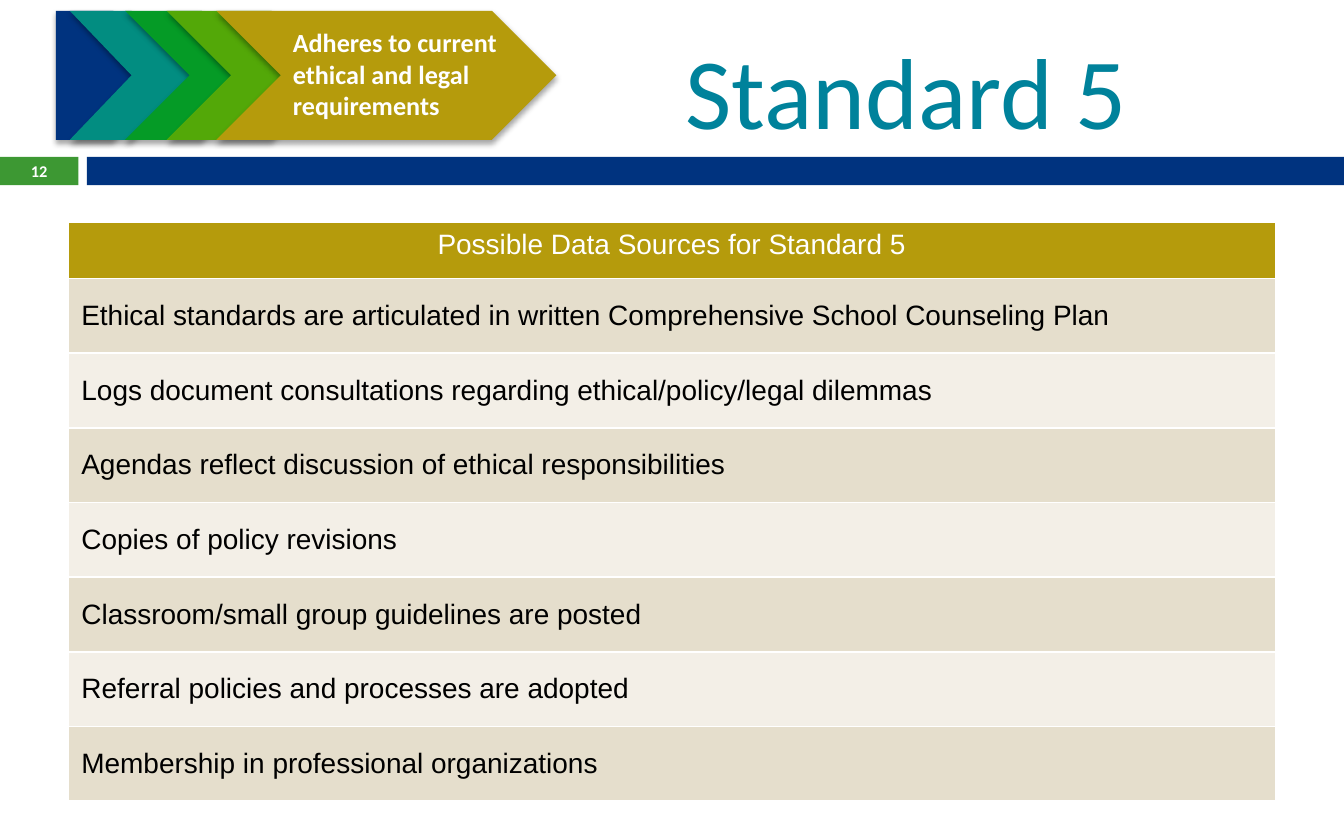
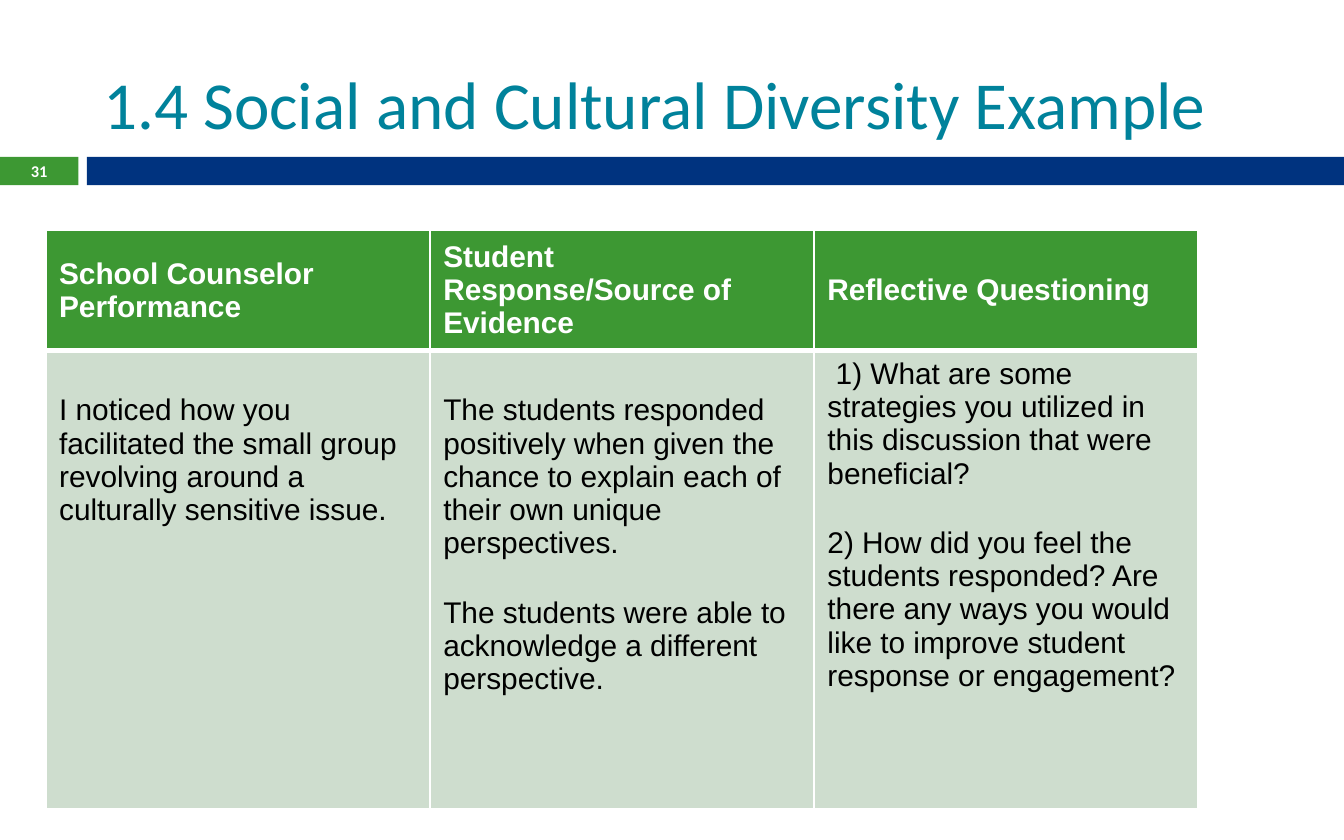
from lxml.etree import SubElement
from pptx import Presentation
from pptx.dml.color import RGBColor
from pptx.enum.shapes import MSO_SHAPE
from pptx.enum.text import MSO_ANCHOR, PP_ALIGN
from pptx.oxml import parse_xml
from pptx.oxml.ns import nsdecls, qn
from pptx.util import Pt

COLORS = {
    "white": "FFFFFF", "black": "000000", "title": "00829B",
    "navy": "00337F", "green": "3D9833", "gold": "B59B0C",
    "teal": "028D81", "emerald": "059B26", "lime": "53A808",
    "sand": "E5DECC", "cream": "F3EFE7", "sage": "CEDDCE",
}
BAND_TOP, BAND_HEIGHT = 84.1, 15.1
BADGE_WIDTH, BAND_LEFT = 42, 46.6
SLIDE_WIDTH, SLIDE_HEIGHT = 720, 450
BLANK_LINE = 19.5
CELL_INSET = 3.6

DATA_SOURCES = [
    "Ethical standards are articulated in written Comprehensive School Counseling Plan",
    "Logs document consultations regarding ethical/policy/legal dilemmas",
    "Agendas reflect discussion of ethical responsibilities",
    "Copies of policy revisions",
    "Classroom/small group guidelines are posted",
    "Referral policies and processes are adopted",
    "Membership in professional organizations",
]
EXAMPLE = [
    ("School Counselor Performance", BLANK_LINE, [
        "I noticed how you facilitated the small group revolving around a "
        "culturally sensitive issue."]),
    ("Student Response/Source of Evidence", BLANK_LINE, [
        "The students responded positively when given the chance to explain "
        "each of their own unique perspectives.",
        "The students were able to acknowledge a different perspective."]),
    ("Reflective Questioning", 0, [
        " 1) What are some strategies you utilized in this discussion that "
        "were beneficial?",
        "2) How did you feel the students responded? Are there any ways you "
        "would like to improve student response or engagement?"]),
]
ARROWS = [
    (MSO_SHAPE.PENTAGON, 30, 61.2, "navy"),
    (MSO_SHAPE.CHEVRON, 37.4, 66.2, "teal"),
    (MSO_SHAPE.CHEVRON, 67, 75.6, "emerald"),
    (MSO_SHAPE.CHEVRON, 89.3, 90.7, "lime"),
    (MSO_SHAPE.CHEVRON, 115.9, 182.2, "gold"),
]


def rgb(name):
    """Return the named colour."""
    return RGBColor.from_string(COLORS[name])


def write(frame, paragraphs, size, color, font, bold=False, align=PP_ALIGN.LEFT):
    """Fill a text frame, leaving a line's gap between paragraphs."""
    frame.text = "\n".join(paragraphs)
    for index, paragraph in enumerate(frame.paragraphs):
        paragraph.alignment = align
        if index:
            paragraph.space_before = Pt(BLANK_LINE)
        for run in paragraph.runs:
            run.font.size = Pt(size)
            run.font.name = font
            run.font.bold = bold
            run.font.color.rgb = rgb(color)


def add_label(slide, text, box, size, color, anchor=MSO_ANCHOR.TOP, **style):
    """Add a wrapped Calibri text box."""
    label = slide.shapes.add_textbox(*map(Pt, box))
    frame = label.text_frame
    frame.word_wrap = True
    frame.vertical_anchor = anchor
    write(frame, [text], size, color, "Calibri", **style)


def add_block(shapes, preset, box, color):
    """Add a flat, unlined preset shape."""
    block = shapes.add_shape(preset, *map(Pt, box))
    block.fill.solid()
    block.fill.fore_color.rgb = rgb(color)
    block.line.fill.background()
    block.shadow.inherit = False
    return block


def cast_shadow(block):
    """Give a shape a soft shadow straight below it."""
    effects = block.element.spPr.find(qn("a:effectLst"))
    shadow = SubElement(effects, qn("a:outerShdw"), blurRad=str(Pt(3)),
                        dist=str(Pt(2)), dir="5400000", rotWithShape="0")
    tint = SubElement(shadow, qn("a:srgbClr"), val=COLORS["black"])
    SubElement(tint, qn("a:alpha"), val="35000")


def add_arrow_banner(slide, text):
    """Add the row of overlapping arrows with its caption."""
    banner = slide.shapes.add_group_shape()
    for preset, left, width, color in ARROWS:
        cast_shadow(add_block(banner.shapes, preset, (left, 5.8, width, 69.1), color))
    add_label(slide, text, (149.8, 10.8, 149.8, 58.3), 14, "white", bold=True)


def add_slide(deck, title, title_box, title_size, number):
    """Add a slide with its title, band and numbered badge."""
    slide = deck.slides.add_slide(deck.slide_layouts[6])
    badge = (0, BAND_TOP, BADGE_WIDTH, BAND_HEIGHT)
    band = (BAND_LEFT, BAND_TOP, SLIDE_WIDTH - BAND_LEFT, BAND_HEIGHT)
    add_block(slide.shapes, MSO_SHAPE.RECTANGLE, badge, "green")
    add_block(slide.shapes, MSO_SHAPE.RECTANGLE, band, "navy")
    add_label(slide, title, title_box, title_size, "title", MSO_ANCHOR.BOTTOM)
    add_label(slide, number, badge, 8.8, "white", MSO_ANCHOR.MIDDLE,
              bold=True, align=PP_ALIGN.CENTER)
    return slide


def add_grid(slide, left, top, column_widths, row_heights):
    """Add an empty table with the given columns and rows."""
    frame = slide.shapes.add_table(
        len(row_heights), len(column_widths), Pt(left), Pt(top),
        Pt(sum(column_widths)), Pt(sum(row_heights)))
    grid = frame.table
    for column, width in zip(grid.columns, column_widths):
        column.width = Pt(width)
    for row, height in zip(grid.rows, row_heights):
        row.height = Pt(height)
    return grid


def fill_cell(cell, paragraphs, size, color, fill, anchor=MSO_ANCHOR.MIDDLE,
              top_gap=0, top_border=1, bottom_border=1, **style):
    """Write, colour and border one table cell."""
    write(cell.text_frame, paragraphs, size, color, "Arial", **style)
    cell.vertical_anchor = anchor
    cell.margin_top = Pt(CELL_INSET + top_gap)
    cell.margin_bottom = Pt(CELL_INSET)
    cell.fill.solid()
    cell.fill.fore_color.rgb = rgb(fill)
    properties = cell._tc.get_or_add_tcPr()
    borders = {"L": 1, "R": 1, "T": top_border, "B": bottom_border}
    for index, (side, width) in enumerate(borders.items()):
        properties.insert(index, parse_xml(
            f'<a:ln{side} {nsdecls("a")} w="{Pt(width)}"><a:solidFill>'
            f'<a:srgbClr val="{COLORS["white"]}"/></a:solidFill></a:ln{side}>'))


def add_source_table(slide):
    """List the data sources under a gold heading."""
    grid = add_grid(slide, 36.4, 119.2, [647], [30] + [40] * len(DATA_SOURCES))
    fill_cell(grid.cell(0, 0), ["Possible Data Sources for Standard 5"], 15,
              "white", "gold", MSO_ANCHOR.TOP, align=PP_ALIGN.CENTER)
    for row, source in enumerate(DATA_SOURCES, 1):
        fill_cell(grid.cell(row, 0), [source], 15, "black",
                  "sand" if row % 2 else "cream")


def add_example_table(slide):
    """Show performance, evidence and questions side by side."""
    grid = add_grid(slide, 24.5, 123.2, [205.8] * len(EXAMPLE), [60.6, 245.4])
    for column, (heading, top_gap, paragraphs) in enumerate(EXAMPLE):
        fill_cell(grid.cell(0, column), [heading], 16, "white", "green",
                  bottom_border=3, bold=True)
        fill_cell(grid.cell(1, column), paragraphs, 16, "black", "sage",
                  MSO_ANCHOR.TOP, top_gap, top_border=3)


def main():
    """Build and save the two slides."""
    deck = Presentation()
    deck.slide_width, deck.slide_height = Pt(SLIDE_WIDTH), Pt(SLIDE_HEIGHT)

    standard = add_slide(deck, "Standard 5", (360, 8.6, 324, 74.9), 54, "12")
    add_source_table(standard)
    add_arrow_banner(standard, "Adheres to current ethical and legal requirements")

    diversity = add_slide(deck, "1.4 Social and Cultural Diversity Example",
                          (48.2, 15.1, 642.2, 64.8), 36, "31")
    add_example_table(diversity)

    deck.save("out.pptx")


if __name__ == "__main__":
    main()
